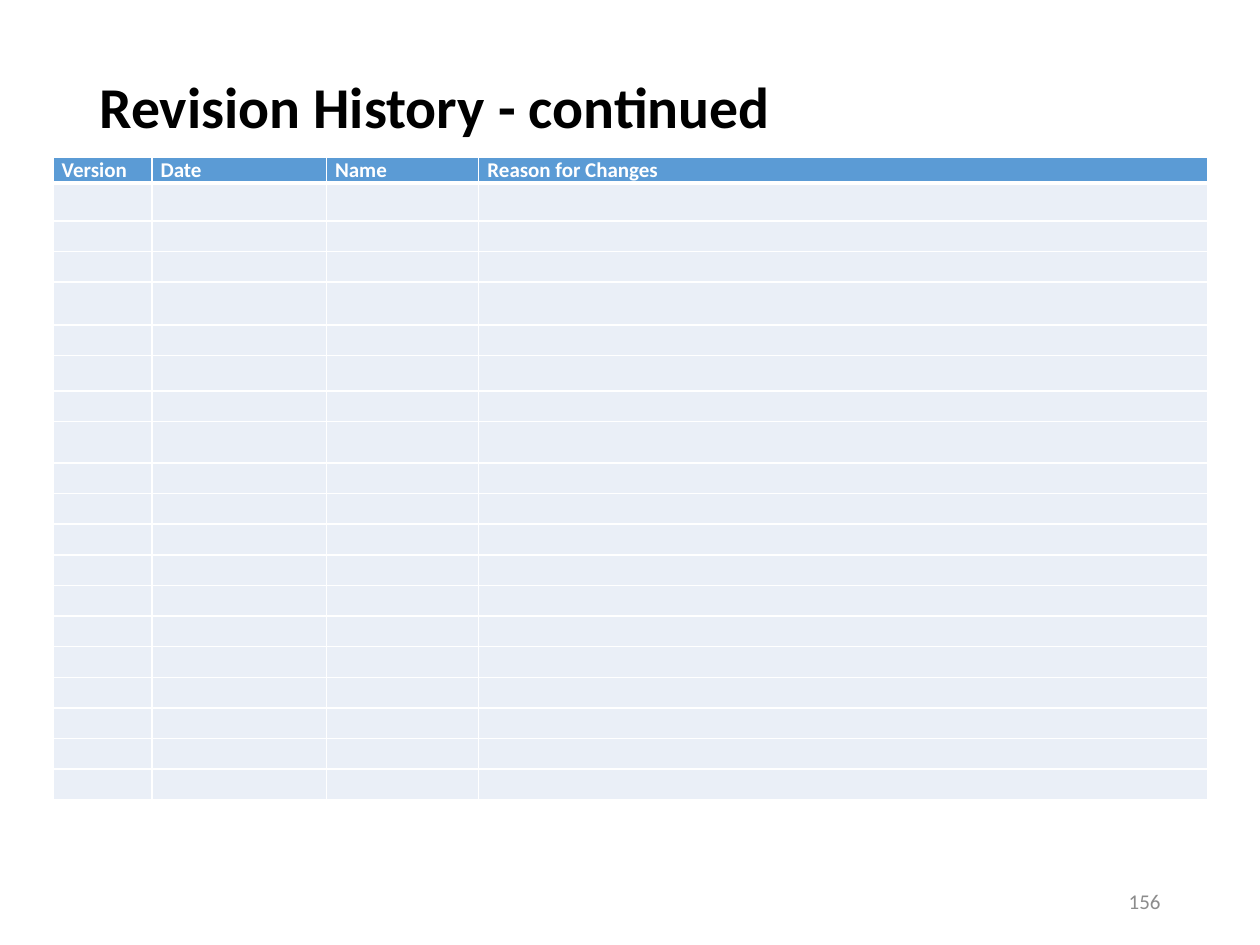
import pptx
import pptx.dml.color
import pptx.enum.text
import pptx.oxml
import pptx.oxml.ns
import pptx.util

ANCHOR = pptx.enum.text.MSO_ANCHOR
ALIGN = pptx.enum.text.PP_ALIGN
GRID_COLUMNS, GRID_ROWS = 100, 75


def colour(hex_value):
    """Turn a hex string into a colour."""
    return pptx.dml.color.RGBColor.from_string(hex_value)


def apply(target, values):
    """Set every attribute named in a dict of format values."""
    for name, value in values.items():
        setattr(target, name, value)


class RevisionSlide:
    """Hold the style and the current slide, placed on a grid of tenths of an inch."""

    font = "Calibri"
    header_fill, body_fill, rule = "5B9BD5", "EAEFF7", "FFFFFF"

    def __init__(self, deck):
        """Add a title-only slide to the deck."""
        self.column = deck.slide_width / GRID_COLUMNS
        self.row = deck.slide_height / GRID_ROWS
        self.slide = deck.slides.add_slide(deck.slide_layouts[5])

    def place(self, columns, rows, width, height):
        """Convert grid positions to slide lengths."""
        return (int(columns * self.column), int(rows * self.row),
                int(width * self.column), int(height * self.row))

    def add_wording(self, frame, wording, size, ink, bold=False, align=ALIGN.LEFT):
        """Put formatted text in a frame."""
        paragraph = frame.paragraphs[0]
        paragraph.alignment = align
        run = paragraph.add_run()
        run.text = wording
        apply(run.font, {"name": self.font, "size": pptx.util.Pt(size), "bold": bold})
        run.font.color.rgb = colour(ink)
        return paragraph

    def title(self, wording, box):
        """Fill the title placeholder, raised by half a line."""
        heading = self.slide.shapes.title
        apply(heading, dict(zip(("left", "top", "width", "height"), self.place(*box))))
        apply(heading.text_frame, {
            "vertical_anchor": ANCHOR.MIDDLE, "word_wrap": True,
            "auto_size": pptx.enum.text.MSO_AUTO_SIZE.NONE,
            "margin_bottom": pptx.util.Inches(0.55)})
        self.add_wording(heading.text_frame, wording, 33, "000000", True).line_spacing = 0.9

    def page_number(self, wording, box):
        """Add the right-aligned page number."""
        frame = self.slide.shapes.add_textbox(*self.place(*box)).text_frame
        apply(frame, {"word_wrap": True, "vertical_anchor": ANCHOR.MIDDLE})
        self.add_wording(frame, wording, 12, "8C8C8C", align=ALIGN.RIGHT)

    def borders(self, cell, top, bottom):
        """Rule the four sides of a cell, widths in points."""
        properties = cell._tc.get_or_add_tcPr()
        for side, points in (("L", 1), ("R", 1), ("T", top), ("B", bottom)):
            properties.append(pptx.oxml.parse_xml(
                f'<a:ln{side} {pptx.oxml.ns.nsdecls("a")} w="{pptx.util.Pt(points)}">'
                f'<a:solidFill><a:srgbClr val="{self.rule}"/></a:solidFill></a:ln{side}>'))

    def history_table(self, headings, widths, heights, corner):
        """Add the table with a header row and blank entries."""
        box = self.place(*corner, sum(widths), sum(heights))
        table = self.slide.shapes.add_table(len(heights), len(widths), *box).table
        table.horz_banding = False
        for column, width in zip(table.columns, widths):
            column.width = int(width * self.column)
        for index, height in enumerate(heights):
            table.rows[index].height = int(height * self.row)
            for position, heading in enumerate(headings):
                cell = table.cell(index, position)
                apply(cell, {"margin_left": pptx.util.Inches(0.07),
                             "margin_right": pptx.util.Inches(0.07),
                             "margin_top": 0, "margin_bottom": 0})
                self.borders(cell, 3 if index == 1 else 1, 3 if index == 0 else 1)
                cell.fill.solid()
                cell.fill.fore_color.rgb = colour(self.body_fill if index else self.header_fill)
                if index == 0:
                    self.add_wording(cell.text_frame, heading, 12, "FFFFFF", True)
                else:
                    cell.text_frame.paragraphs[0]._p.append(pptx.oxml.parse_xml(
                        f'<a:endParaRPr {pptx.oxml.ns.nsdecls("a")} sz="1200"/>'))


def main():
    """Build and save the revision history slide."""
    deck = pptx.Presentation()
    apply(deck, {"slide_width": pptx.util.Inches(10), "slide_height": pptx.util.Inches(7.5)})
    page = RevisionSlide(deck)
    page.title("Revision History - continued", (6.9, 4, 86.2, 14.5))
    entry = 2.43
    heights = [2, 3, entry, entry, 3.4, entry, 2.8, entry, 3.3] + [entry] * 11
    page.history_table(("Version", "Date", "Name", "Reason for Changes"),
                       (7.85, 13.85, 12.1, 57.9), heights, (4.2, 12.5))
    page.page_number("156", (70.6, 69.5, 22.5, 4))
    deck.save("out.pptx")


if __name__ == "__main__":
    main()
